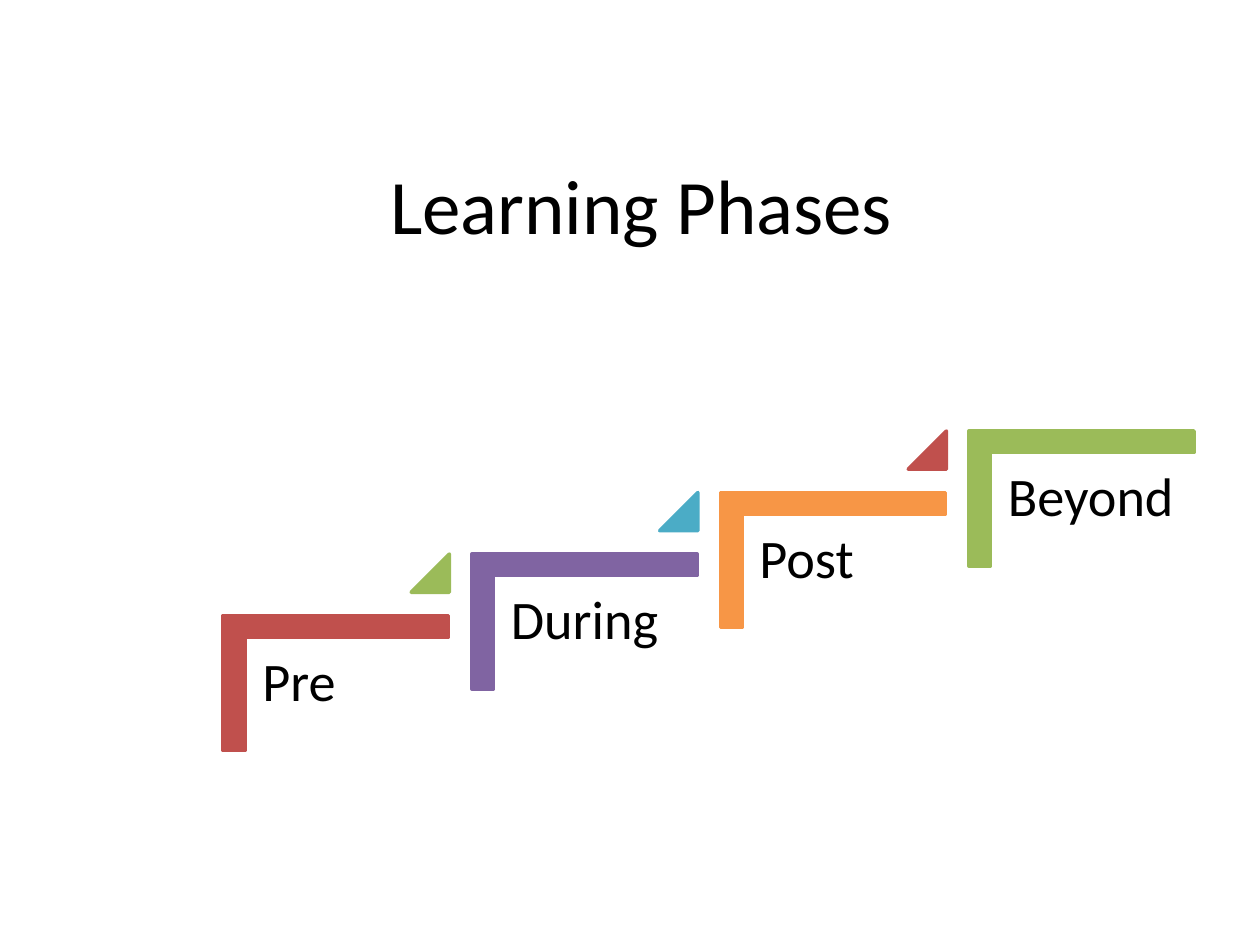
from pptx import Presentation
from pptx.dml.color import RGBColor
from pptx.enum.shapes import MSO_SHAPE
from pptx.enum.text import MSO_ANCHOR, PP_ALIGN
from pptx.util import Cm, Pt

RED, GREEN, PURPLE, BLUE, ORANGE = "C0504D", "9BBB59", "8064A2", "4BACC6", "F79646"
STEP_RIGHT, STEP_UP = 5.01, 1.24


def add_text(parent, text, left, top, width, height, *, size, align=PP_ALIGN.LEFT,
             anchor=MSO_ANCHOR.TOP, inset=0.25, line_spacing=1.0):
    box = parent.add_textbox(Cm(left), Cm(top), Cm(width), Cm(height))
    frame = box.text_frame
    frame.word_wrap = True
    frame.vertical_anchor = anchor
    frame.margin_left = frame.margin_right = Cm(inset)
    frame.margin_top = frame.margin_bottom = Cm(inset)
    paragraph = frame.paragraphs[0]
    paragraph.alignment = align
    paragraph.line_spacing = line_spacing
    run = paragraph.add_run()
    run.text = text
    run.font.name = "Calibri"
    run.font.size = Pt(size)
    run.font.color.rgb = RGBColor.from_string("000000")


def add_solid(parent, preset, left, top, width, height, color, adjustments):
    """Add a preset shape whose fill and outline share one colour."""
    solid = parent.add_shape(preset, Cm(left), Cm(top), Cm(width), Cm(height))
    solid.shadow.inherit = False
    solid.fill.solid()
    solid.fill.fore_color.rgb = RGBColor.from_string(color)
    solid.line.color.rgb = RGBColor.from_string(color)
    solid.line.width = Pt(2)
    for index, value in enumerate(adjustments):
        solid.adjustments[index] = value
    return solid


presentation = Presentation()
presentation.slide_width = Cm(25.4)
presentation.slide_height = Cm(19.05)
slide = presentation.slides.add_slide(presentation.slide_layouts[6])

add_text(slide.shapes, "Learning Phases", 1.5, 2.51, 22.86, 3.18,
         size=44, align=PP_ALIGN.CENTER, anchor=MSO_ANCHOR.MIDDLE)

phases = [
    ("Pre", RED, GREEN),
    ("During", PURPLE, BLUE),
    ("Post", ORANGE, RED),
    ("Beyond", GREEN, None),
]
staircase = slide.shapes.add_group_shape().shapes
for step, (phase, stair_color, arrow_color) in enumerate(phases):
    right, up = step * STEP_RIGHT, step * STEP_UP
    stair = add_solid(staircase, MSO_SHAPE.CORNER, 5.41 + right, 11.5 - up,
                      2.72, 4.54, stair_color, [0.16, 0.16])
    stair.rotation = 90
    add_text(staircase, phase, 4.96 + right, 12.86 - up, 4.1, 3.59,
             size=31, inset=0.33, line_spacing=0.9)
    if arrow_color:
        add_solid(staircase, MSO_SHAPE.ISOSCELES_TRIANGLE, 8.29 + right, 11.17 - up,
                  0.77, 0.77, arrow_color, [1])

presentation.save("out.pptx")
